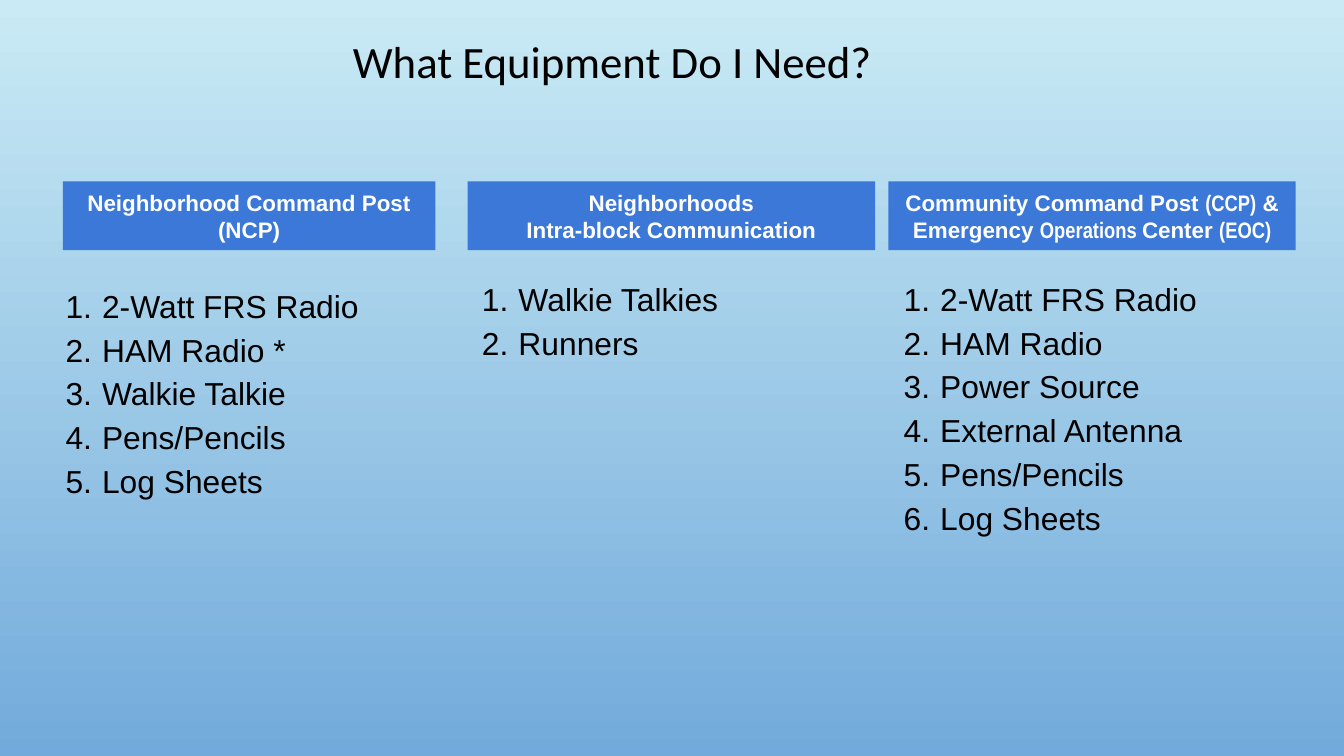
import pptx
import pptx.dml.color
import pptx.enum.shapes
import pptx.enum.text
import pptx.util
from lxml import etree
from pptx.oxml.ns import qn

Cm = pptx.util.Cm
ALIGN = pptx.enum.text.PP_ALIGN
ANCHOR = pptx.enum.text.MSO_ANCHOR

HEADER_TOP, HEADER_HEIGHT = 3.43, 1.3
COLUMNS = [
    {
        "header": (1.19, 7.04),
        "title": [[("Neighborhood Command Post (NCP)", "Arial")]],
        "list": (0.97, 5.16, 7.52, 7.19),
        "items": ["2-Watt FRS Radio", "HAM Radio *", "Walkie Talkie", "Pens/Pencils", "Log Sheets"],
    },
    {
        "header": (8.84, 7.7),
        "title": [[("Neighborhoods", "Arial")], [("Intra-block Communication", "Arial")]],
        "list": (8.84, 5.03, 7.7, 6.78),
        "items": ["Walkie Talkies", "Runners"],
    },
    {
        "header": (16.79, 7.7),
        "title": [
            [("Community Command Post ", "Arial"), ("(CCP)", "Arial Narrow"), (" &", "Arial")],
            [("Emergency ", "Arial"), ("Operations ", "Arial Narrow"),
             ("Center ", "Arial"), ("(EOC)", "Arial Narrow")],
        ],
        "list": (16.81, 5.03, 7.37, 6.78),
        "items": ["2-Watt FRS Radio", "HAM Radio", "Power Source",
                  "External Antenna", "Pens/Pencils", "Log Sheets"],
    },
]


def color(value):
    """Turn a hex string into a colour."""
    return pptx.dml.color.RGBColor.from_string(value)


def style(span, font, size, value, bold=False):
    """Format one run."""
    span.font.name = font
    span.font.size = pptx.util.Pt(size)
    span.font.bold = bold
    span.font.color.rgb = color(value)


def prepare(frame, inset, anchor):
    """Set wrapping, insets and anchor of a text frame."""
    frame.word_wrap = True
    frame.vertical_anchor = anchor
    frame.margin_left = frame.margin_right = Cm(inset)
    frame.margin_top = frame.margin_bottom = Cm(inset)


def paragraphs(frame, count):
    """Return the given number of paragraphs of an empty text frame."""
    return [frame.paragraphs[0]] + [frame.add_paragraph() for _ in range(count - 1)]


def paint_background(page):
    """Fill the page with a gradient from top to bottom."""
    fill = page.background.fill
    fill.gradient()
    fill.gradient_angle = 270
    for stop, value in zip(fill.gradient_stops, ("CAEBF5", "72AADB")):
        stop.color.rgb = color(value)


def add_title(page, area, text):
    """Place the page title in the given area."""
    frame = page.shapes.add_textbox(*map(Cm, area)).text_frame
    prepare(frame, 0.1, ANCHOR.MIDDLE)
    frame.text = text
    para = frame.paragraphs[0]
    para.alignment = ALIGN.CENTER
    style(para.runs[0], "Calibri", 24, "000000")


def add_header(page, area, lines):
    """Place a filled column header in the given area."""
    box = page.shapes.add_shape(pptx.enum.shapes.MSO_SHAPE.RECTANGLE, *map(Cm, area))
    box.shadow.inherit = False
    box.fill.solid()
    box.fill.fore_color.rgb = color("3C78D8")
    box.line.fill.background()
    prepare(box.text_frame, 0.15, ANCHOR.MIDDLE)
    for para, line in zip(paragraphs(box.text_frame, len(lines)), lines):
        para.alignment = ALIGN.CENTER
        for text, font in line:
            span = para.add_run()
            span.text = text
            style(span, font, 12, "FFFFFF", bold=True)


def number(para):
    """Give a paragraph a hanging automatic number."""
    props = para._p.get_or_add_pPr()
    props.set("marL", str(Cm(0.81)))
    props.set("indent", str(Cm(-0.69)))
    bullet_color = etree.SubElement(props, qn("a:buClr"))
    etree.SubElement(bullet_color, qn("a:srgbClr"), val="000000")
    etree.SubElement(props, qn("a:buFont"), typeface="Arial")
    etree.SubElement(props, qn("a:buAutoNum"), type="arabicPeriod")


def add_list(page, area, items):
    """Place a numbered equipment list in the given area."""
    frame = page.shapes.add_textbox(*map(Cm, area)).text_frame
    prepare(frame, 0.15, ANCHOR.TOP)
    for para, item in zip(paragraphs(frame, len(items)), items):
        para.line_spacing = 1.15
        number(para)
        para.text = item
        style(para.runs[0], "Arial", 17, "000000")


def main():
    """Build and save the deck."""
    deck = pptx.Presentation()
    deck.slide_width, deck.slide_height = Cm(25.4), Cm(14.29)
    page = deck.slides.add_slide(deck.slide_layouts[6])
    paint_background(page)
    add_title(page, (0.79, 0.15, 21.56, 1.98), "What Equipment Do I Need?")
    for column in COLUMNS:
        left, width = column["header"]
        add_header(page, (left, HEADER_TOP, width, HEADER_HEIGHT), column["title"])
        add_list(page, column["list"], column["items"])
    deck.save("out.pptx")


if __name__ == "__main__":
    main()
